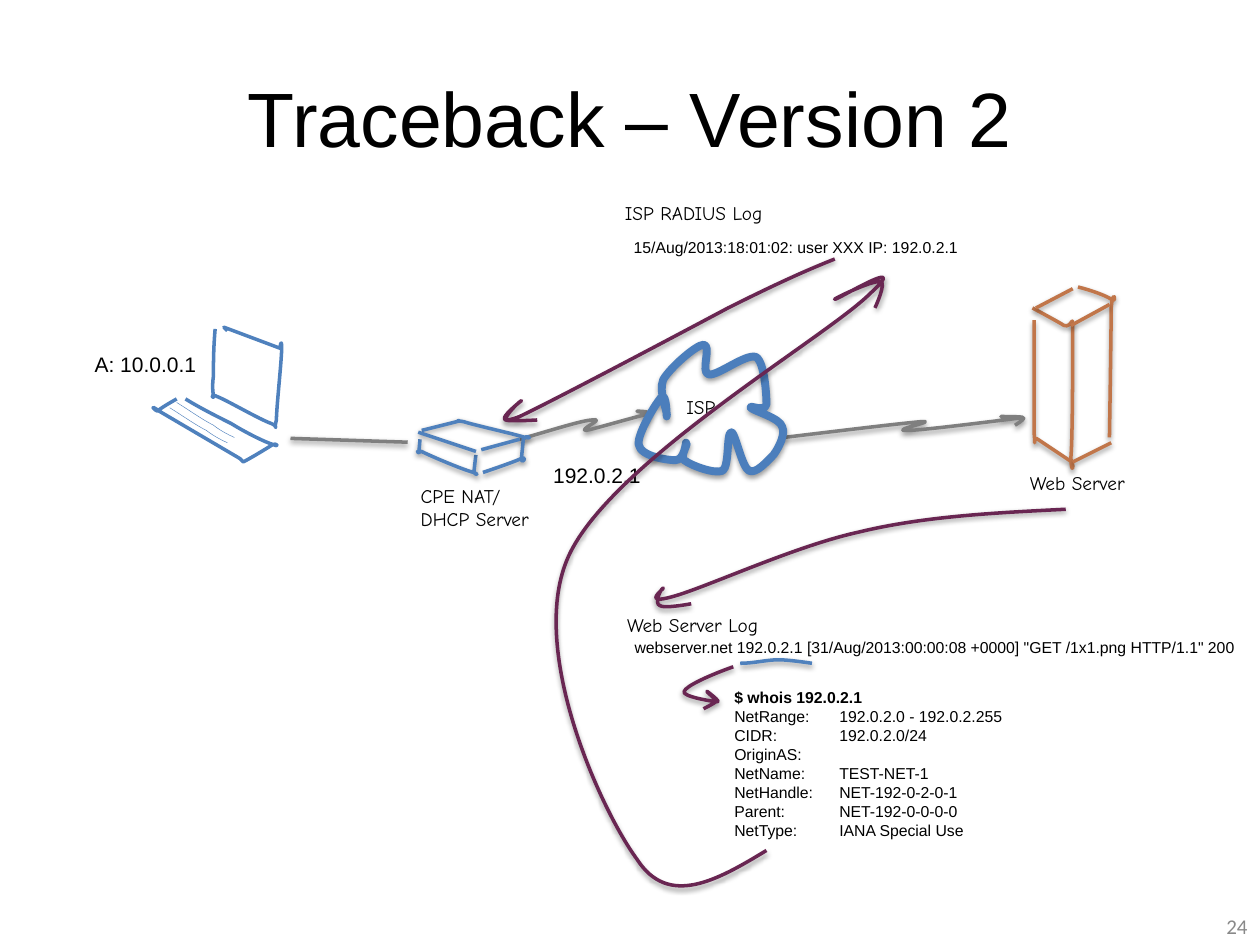
"""Build the "Traceback – Version 2" network diagram slide."""
import lxml.etree
import pptx
import pptx.dml.color
import pptx.enum.shapes
import pptx.enum.text
import pptx.oxml
import pptx.oxml.ns
import pptx.util

Pt = pptx.util.Pt
RGB = pptx.dml.color.RGBColor
qn = pptx.oxml.ns.qn
ALIGN = pptx.enum.text.PP_ALIGN
ANCHOR = pptx.enum.text.MSO_ANCHOR

BLACK = RGB(0x00, 0x00, 0x00)
PAGE_GRAY = RGB(0x89, 0x89, 0x89)
BLUE = RGB(0x4F, 0x81, 0xBD)
CLOUD_BLUE = RGB(0x4B, 0x7E, 0xBC)
GRAY = RGB(0x7F, 0x7F, 0x7F)
ORANGE = RGB(0xC1, 0x76, 0x4A)
PLUM = RGB(0x69, 0x26, 0x52)
HAND = "Comic Neue"

SCREEN = [(123, 188), (122, 199, 122, 209, 122, 215), (121, 222, 122, 225, 122, 227),
          (122, 228, 119, 224, 125, 227), (130, 229, 149, 240, 155, 242),
          (160, 244, 156, 247, 158, 240), (158, 233, 161, 206, 161, 199),
          (161, 192, 160, 199, 160, 199), (128, 187), (130, 189)]
KEYBOARD = [(106, 228), (114, 233, 124, 238, 132, 242), (140, 247, 152, 253, 156, 254),
            (160, 256, 158, 253, 156, 254), (153, 256, 143, 262, 139, 264), (137, 262),
            (91, 235), (84, 230, 89, 235, 90, 235), (92, 233, 101, 228, 101, 228)]
KEY_ROW = [(97, 233), (105, 238, 112, 243, 118, 246), (123, 250, 130, 253, 130, 253)]
CPE_TO_ISP = [(297, 251), (315, 246, 333, 240, 339, 240), (346, 239, 330, 246, 335, 246),
              (340, 245, 364, 238, 369, 237), (374, 235, 364, 235, 364, 235),
              (364, 235, 369, 236, 370, 237), (371, 238, 368, 241, 368, 241)]
ISP_TO_SERVER = [(448, 250), (481, 246, 514, 242, 526, 241), (538, 240, 508, 246, 518, 246),
                 (527, 246, 573, 240, 582, 239), (591, 238, 572, 238, 572, 238),
                 (573, 238, 583, 238, 585, 239), (585, 240, 580, 243, 580, 243)]
CLOUD = [(438, 231), (438, 226, 437, 207, 432, 204), (426, 202, 410, 215, 405, 214),
         (400, 213, 407, 197, 402, 197), (398, 197, 383, 210, 379, 217),
         (376, 224, 382, 236, 381, 238), (381, 239, 381, 224, 378, 227),
         (375, 230, 364, 248, 365, 254), (366, 261, 382, 263, 386, 263),
         (391, 263, 392, 253, 392, 253), (394, 253, 388, 261, 391, 263),
         (395, 266, 408, 271, 413, 269), (417, 266, 415, 247, 418, 247),
         (420, 247, 424, 267, 428, 269), (432, 271, 438, 264, 442, 260),
         (445, 256, 449, 248, 447, 244), (446, 239, 431, 235, 429, 233),
         (428, 231, 437, 236, 438, 231)]
TOWER_FRONT = [(591, 183), (591, 210, 591, 237, 591, 248), (592, 259, 590, 248, 593, 251),
               (596, 253, 608, 261, 611, 263), (615, 264, 612, 274, 612, 261),
               (613, 249, 613, 202, 613, 190), (613, 177, 613, 188, 608, 186),
               (605, 184, 590, 176, 590, 176)]
TOWER_SIDE = [(616, 164), (624, 166, 632, 169, 635, 171), (639, 174, 636, 163, 635, 176),
              (635, 189, 634, 250, 634, 250)]
TOWER_EDGES = [(612, 186, 634, 174), (613, 264, 635, 253), (592, 176, 613, 165)]
SERVER_TO_LOG = [(609, 291), (569, 293, 528, 295, 491, 304), (454, 312, 403, 336, 384, 341),
                 (366, 346, 380, 336, 379, 336), (377, 337, 374, 345, 377, 346),
                 (379, 348, 395, 345, 395, 345)]
UNDERLINE = [(423, 379), (431, 379, 438, 377, 445, 377), (451, 377, 464, 379, 464, 379)]
ROUTER_FRONT = [(240, 251), (240, 254, 239, 258, 240, 258), (240, 260, 236, 257, 241, 258),
                (247, 261, 266, 269, 271, 270), (275, 272, 270, 271, 271, 269),
                (271, 268, 272, 260, 272, 260)]
ROUTER_BACK = [(241, 246), (249, 244, 257, 242, 261, 241), (265, 240, 258, 240, 265, 241),
               (271, 243, 294, 248, 300, 250), (306, 251, 300, 248, 299, 251),
               (299, 253, 298, 261, 298, 263), (298, 265, 302, 261, 298, 262),
               (294, 264, 276, 270, 276, 270)]
ROUTER_EDGES = [(239, 247, 272, 258), (275, 257, 297, 251)]
LOG_TO_WHOIS = [(419, 381), (405, 386, 392, 392, 391, 395), (389, 398, 408, 401, 410, 401),
                (412, 401, 404, 395, 404, 395), (403, 395, 409, 399, 409, 401),
                (408, 402, 402, 405, 402, 405)]
WHOIS_TO_RADIUS = [(438, 486), (410, 503, 382, 519, 364, 491), (344, 464, 302, 373, 324, 320),
                   (346, 266, 472, 193, 497, 168), (523, 144, 476, 173, 477, 171),
                   (478, 170, 499, 160, 503, 161), (507, 161, 500, 176, 500, 176)]
RADIUS_TO_CPE = [(477, 148), (462, 154, 446, 161, 416, 176), (386, 192, 316, 229, 297, 238),
                 (276, 246, 299, 228, 298, 229), (297, 229, 288, 238, 289, 240),
                 (291, 241, 307, 240, 307, 240)]
WHOIS = ["$ whois 192.0.2.1", "NetRange:\t192.0.2.0 - 192.0.2.255", "CIDR:\t192.0.2.0/24",
         "OriginAS:", "NetName:\tTEST-NET-1", "NetHandle:\tNET-192-0-2-0-1",
         "Parent:\tNET-192-0-0-0-0", "NetType:\tIANA Special Use"]


def add_text(s, box, lines, size=9, font="Arial", color=BLACK, align=ALIGN.LEFT,
             anchor=ANCHOR.TOP, wrap=False, grow=True, bold_first=False, tab=None):
    """Add a text box with one paragraph per line."""
    tf = s.shapes.add_textbox(*map(Pt, box)).text_frame
    tf.word_wrap, tf.vertical_anchor = wrap, anchor
    if grow:
        tf.auto_size = pptx.enum.text.MSO_AUTO_SIZE.SHAPE_TO_FIT_TEXT
    for i, line in enumerate(lines):
        p = tf.paragraphs[0] if i == 0 else tf.add_paragraph()
        p.alignment = align
        if tab:
            stops = lxml.etree.SubElement(p._p.get_or_add_pPr(), qn("a:tabLst"))
            lxml.etree.SubElement(stops, qn("a:tab"), pos=str(Pt(tab)), algn="l")
        r = p.add_run()
        r.text = line
        r.font.size, r.font.name = Pt(size), font
        r.font.bold = bold_first and i == 0
        r.font.color.rgb = color


def style_stroke(sp, color, width, shadow):
    """Set the line and either a soft shadow below it or none."""
    sp.line.color.rgb, sp.line.width = color, Pt(width)
    effects = lxml.etree.SubElement(sp._element.spPr, qn("a:effectLst"))
    if shadow:
        outer = lxml.etree.SubElement(effects, qn("a:outerShdw"), blurRad=str(Pt(3.1)),
                                      dist=str(Pt(1.6)), dir="5400000", rotWithShape="0")
        clr = lxml.etree.SubElement(outer, qn("a:srgbClr"), val="000000")
        lxml.etree.SubElement(clr, qn("a:alpha"), val="38000")


def bezier(start, segment, t):
    """Return the point at t on a cubic segment."""
    weights = ((1 - t) ** 3, 3 * t * (1 - t) ** 2, 3 * t * t * (1 - t), t ** 3)
    coords = (*start, *segment)
    return tuple(sum(w * c for w, c in zip(weights, coords[axis::2])) for axis in (0, 1))


def add_stroke(shapes, path, color, width=2, shadow=True, close=False):
    """Draw a start point followed by line ends and cubic segments as one curve."""
    outline = [path[0]]
    for segment in path[1:]:
        start = outline[-1]
        steps = [bezier(start, segment, n / 16) for n in range(1, 17)]
        outline += steps if len(segment) == 6 else [segment]
    builder = shapes.build_freeform(*map(Pt, path[0]))
    builder.add_line_segments([tuple(map(Pt, point)) for point in outline[1:]], close=close)
    sp = builder.convert_to_shape()
    geometry = sp._element.spPr.find(".//" + qn("a:path"))
    for line in geometry.findall(qn("a:lnTo")):
        geometry.remove(line)
    for i, segment in enumerate(path[1:], 1):
        tag = "a:cubicBezTo" if len(segment) == 6 else "a:lnTo"
        node = lxml.etree.Element(qn(tag))
        geometry.insert(i, node)
        for x, y in zip(segment[::2], segment[1::2]):
            lxml.etree.SubElement(node, qn("a:pt"), x=str(Pt(x) - sp.left), y=str(Pt(y) - sp.top))
    sp.fill.background()
    style_stroke(sp, color, width, shadow)


def add_line(shapes, ends, color):
    """Draw a straight line between two points."""
    kind = pptx.enum.shapes.MSO_CONNECTOR.STRAIGHT
    style_stroke(shapes.add_connector(kind, *map(Pt, ends)), color, 2, True)


def add_laptop(s):
    """Draw the client laptop."""
    shapes = s.shapes.add_group_shape().shapes
    for path in (SCREEN, KEYBOARD):
        add_stroke(shapes, path, BLUE, shadow=False)
    for dx, dy in ((0, 0), (4, -3)):
        row = [tuple(c + (dx, dy)[i % 2] for i, c in enumerate(seg)) for seg in KEY_ROW]
        add_stroke(shapes, row, BLUE, width=0.25, shadow=False)


def add_box(s, strokes, edges, color):
    """Draw a sketched box as a group of curves and straight edges."""
    shapes = s.shapes.add_group_shape().shapes
    for path in strokes:
        add_stroke(shapes, path, color)
    for ends in edges:
        add_line(shapes, ends, color)


def main():
    prs = pptx.Presentation()
    prs.slide_width, prs.slide_height = Pt(720), Pt(540)
    s = prs.slides.add_slide(prs.slide_layouts[6])
    add_text(s, (21, 21.6, 678, 90), ["Traceback – Version 2"], size=44, align=ALIGN.CENTER,
             anchor=ANCHOR.MIDDLE, wrap=True, grow=False)
    add_text(s, (552, 515, 168, 28.8), ["24"], size=12, font="Calibri", color=PAGE_GRAY,
             align=ALIGN.RIGHT, anchor=ANCHOR.MIDDLE, wrap=True, grow=False)
    add_laptop(s)
    add_text(s, (47, 197.5, 74, 21.8), ["A: 10.0.0.1"], size=12)
    add_stroke(s.shapes, CPE_TO_ISP, GRAY)
    add_stroke(s.shapes, ISP_TO_SERVER, GRAY)
    add_stroke(s.shapes, CLOUD, CLOUD_BLUE, width=4.5, close=True)
    add_box(s, (TOWER_FRONT, TOWER_SIDE), TOWER_EDGES, ORANGE)
    add_text(s, (581.5, 265.7, 83.5, 21), ["Web Server"], size=11, font=HAND)
    add_text(s, (385.2, 222.5, 36, 21), ["ISP"], size=11, font=HAND)
    add_text(s, (355.5, 360.7, 361, 18), [
        'webserver.net 192.0.2.1 [31/Aug/2013:00:00:08 +0000] "GET /1x1.png HTTP/1.1" 200'])
    add_text(s, (351.3, 347, 111, 21), ["Web Server Log"], size=11, font=HAND)
    add_text(s, (412.5, 389.5, 224.6, 105), WHOIS, wrap=True, bold_first=True, tab=60)
    add_stroke(s.shapes, SERVER_TO_LOG, PLUM)
    add_stroke(s.shapes, UNDERLINE, BLUE)
    add_box(s, (ROUTER_FRONT, ROUTER_BACK), ROUTER_EDGES, BLUE)
    add_line(s.shapes, (166, 250.5, 233, 252.7), GRAY)
    add_text(s, (233.3, 273, 94.3, 47.5), ["CPE NAT/", "DHCP Server"], size=11, font=HAND)
    add_text(s, (309, 260.7, 64.8, 21.8), ["192.0.2.1"], size=12)
    add_stroke(s.shapes, LOG_TO_WHOIS, PLUM)
    add_text(s, (350, 111.6, 116.6, 21), ["ISP RADIUS Log"], size=11, font=HAND)
    add_text(s, (355, 132.5, 370.8, 18), ["15/Aug/2013:18:01:02: user XXX IP: 192.0.2.1"],
             wrap=True)
    add_stroke(s.shapes, WHOIS_TO_RADIUS, PLUM)
    add_stroke(s.shapes, RADIUS_TO_CPE, PLUM)
    prs.save("out.pptx")


if __name__ == "__main__":
    main()
